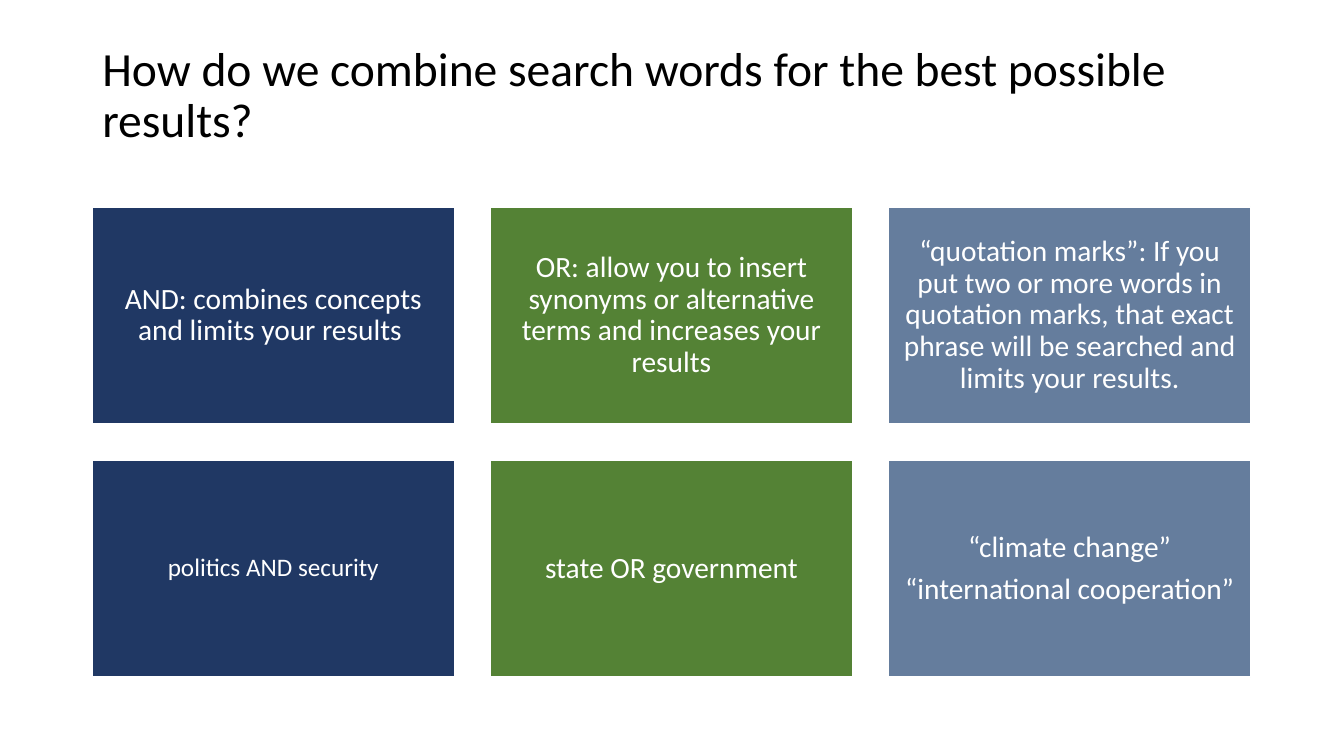
"""Build a slide on combining search words with AND, OR and quotation marks."""
import pptx
import pptx.dml.color
import pptx.enum.shapes
import pptx.enum.text
import pptx.util

Pt = pptx.util.Pt
RGBColor = pptx.dml.color.RGBColor
MIDDLE = pptx.enum.text.MSO_ANCHOR.MIDDLE
ALIGN = pptx.enum.text.PP_ALIGN

BLACK = RGBColor(0x00, 0x00, 0x00)
WHITE = RGBColor(0xFF, 0xFF, 0xFF)
NAVY = RGBColor(0x20, 0x38, 0x64)
GREEN = RGBColor(0x54, 0x82, 0x35)
SLATE = RGBColor(0x65, 0x7D, 0x9D)

FONT = "Calibri"
TITLE = "How do we combine search words for the best possible results?"
COLUMN_COLORS = [NAVY, GREEN, SLATE]
ROWS = [
    [
        (["AND: combines concepts and limits your results "], 21),
        (["OR: allow you to insert synonyms or alternative terms and increases your results"], 21),
        (["“quotation marks”: If you put two or more words in quotation marks, "
          "that exact phrase will be searched and limits your results."], 21),
    ],
    [
        (["politics AND security"], 18),
        (["state OR government"], 21),
        (["“climate change”", "“international cooperation”"], 21),
    ],
]

LEFT, TITLE_TOP, TITLE_WIDTH, TITLE_HEIGHT = 66, 26.6, 827, 85
GRID_TOP, CARD_WIDTH, CARD_HEIGHT, GAP = 147.8, 258.5, 155, 25.9
SPACE_AFTER_RATIO = 0.35


def write(box, lines, size, color, align, space_after=0):
    frame = box.text_frame
    frame.word_wrap = True
    frame.vertical_anchor = MIDDLE
    frame.text = "\n".join(lines)
    for para in frame.paragraphs:
        para.alignment = align
        para.line_spacing = 0.9
        para.space_after = Pt(space_after)
        para.font.name = FONT
        para.font.size = Pt(size)
        para.font.color.rgb = color


def add_card(page, left, top, lines, size, color):
    card = page.shapes.add_shape(
        pptx.enum.shapes.MSO_SHAPE.RECTANGLE,
        Pt(left), Pt(top), Pt(CARD_WIDTH), Pt(CARD_HEIGHT))
    card.shadow.inherit = False
    card.fill.solid()
    card.fill.fore_color.rgb = color
    card.line.color.rgb = WHITE
    card.line.width = Pt(1)
    frame = card.text_frame
    inset = Pt(round(size * 0.3, 1))
    frame.margin_left = frame.margin_right = inset
    frame.margin_top = frame.margin_bottom = inset
    write(card, lines, size, WHITE, ALIGN.CENTER, size * SPACE_AFTER_RATIO)


def main():
    deck = pptx.Presentation()
    deck.slide_width, deck.slide_height = Pt(960), Pt(540)
    page = deck.slides.add_slide(deck.slide_layouts[6])
    title = page.shapes.add_textbox(
        Pt(LEFT), Pt(TITLE_TOP), Pt(TITLE_WIDTH), Pt(TITLE_HEIGHT))
    write(title, [TITLE], 34, BLACK, ALIGN.LEFT)
    for row, cards in enumerate(ROWS):
        top = GRID_TOP + row * (CARD_HEIGHT + GAP)
        for column, (lines, size) in enumerate(cards):
            left = LEFT + column * (CARD_WIDTH + GAP)
            add_card(page, left, top, lines, size, COLUMN_COLORS[column])
    deck.save("out.pptx")


if __name__ == "__main__":
    main()
